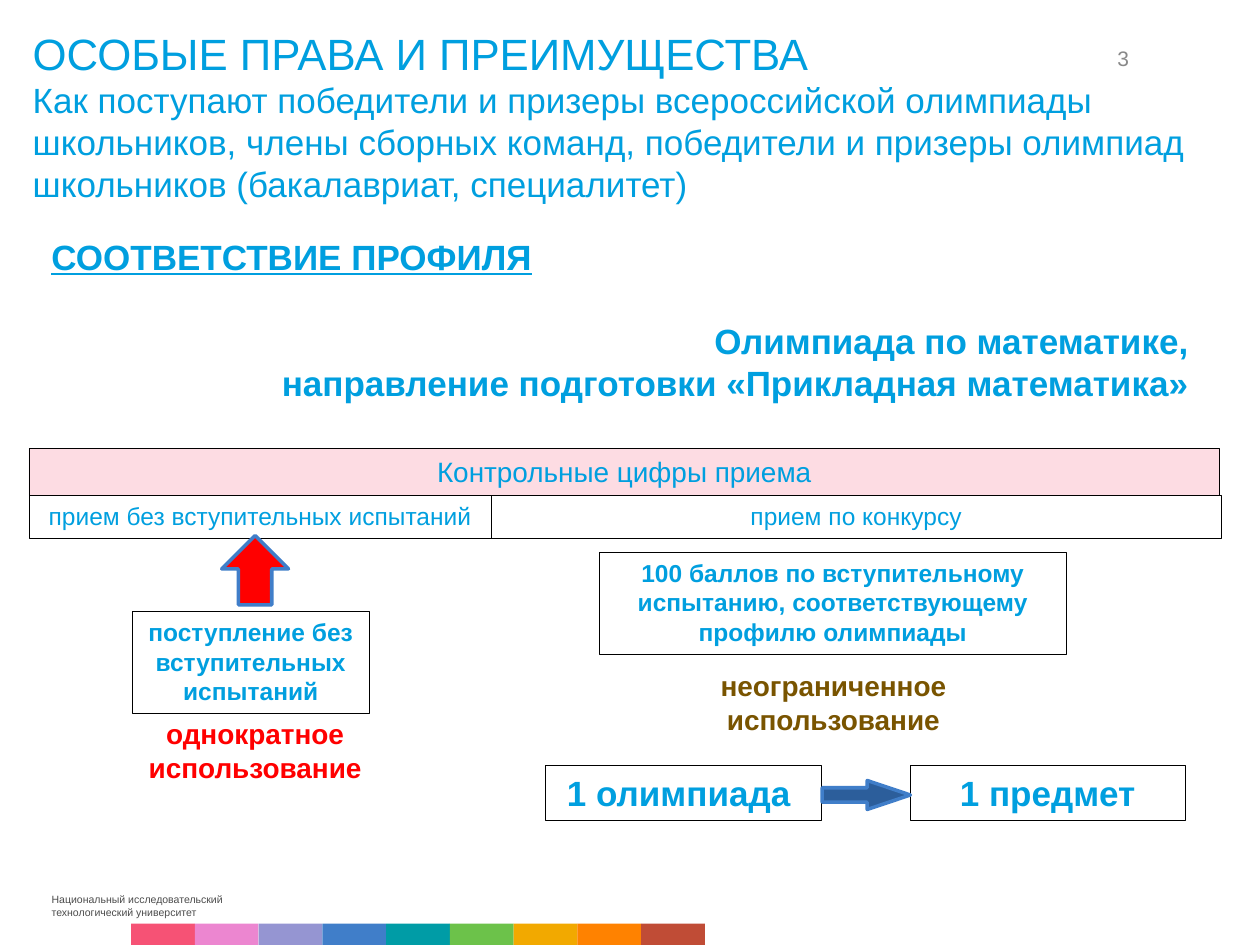
"""Build the slide on olympiad admission rights on a grid of 100 columns by 75 rows."""
from pptx import Presentation, util as u
from pptx.dml.color import RGBColor
from pptx.enum import shapes, text

BLUE, RED, BROWN, GREY = "009FDF", "FF0000", "795400", "898989"
LEFT, CENTER, RIGHT = text.PP_ALIGN.LEFT, text.PP_ALIGN.CENTER, text.PP_ALIGN.RIGHT
RECT, UP = shapes.MSO_SHAPE.RECTANGLE, shapes.MSO_SHAPE.UP_ARROW

prs = Presentation()
prs.slide_width, prs.slide_height = u.Inches(10), u.Inches(7.5)
COL, ROW = prs.slide_width / 100, prs.slide_height / 75
s = prs.slides.add_slide(prs.slide_layouts[5])


def place(box):
    """Turn columns and rows into slide lengths."""
    return [round(n * unit) for n, unit in zip(box, (COL, ROW, COL, ROW))]


def write(tf, lines, align, color, **fmt):
    """Fill a text frame with equally formatted paragraphs."""
    tf.word_wrap, tf.auto_size = True, text.MSO_AUTO_SIZE.NONE
    tf.vertical_anchor = text.MSO_ANCHOR.TOP
    for i, line in enumerate(lines):
        p = tf.paragraphs[0] if i == 0 else tf.add_paragraph()
        p.alignment = align
        r = p.add_run()
        r.text = line
        r.font.name = "Arial"
        r.font.color.rgb = RGBColor.from_string(color)
        for key, value in fmt.items():
            setattr(r.font, key, u.Pt(value) if key == "size" else value)


title = s.shapes.title
title.left, title.top, title.width, title.height = place((1.6, 1.6, 96.1, 4.7))
write(title.text_frame, [
    "ОСОБЫЕ ПРАВА И ПРЕИМУЩЕСТВА",
    "Как поступают победители и призеры всероссийской олимпиады школьников, "
    "члены сборных команд, победители и призеры олимпиад школьников "
    "(бакалавриат, специалитет)"], LEFT, BLUE, size=20)
title.text_frame.paragraphs[0].runs[0].font.size = u.Pt(25)

strip = ["F65275", "EC86D0", "9595D2", "407EC9", "009CA6",
         "6CC24A", "F2A900", "FF8200", "C04C36"]
bars = [(RECT, (10.4 + 5.06 * i, 73.3, 5.06, 1.8), c, None, 0) for i, c in enumerate(strip)]
frames = [
    ((2.3, 35.6, 94.5, 3.7), "FDDCE3", "Контрольные цифры приема", 16, False),
    ((2.3, 39.3, 36.7, 3.4), "FFFFFF", "прием без вступительных испытаний", 14, False),
    ((39, 39.3, 57.9, 3.4), "FFFFFF", "прием по конкурсу", 14, False),
    ((10.5, 48.5, 18.8, 8.1), "FFFFFF", "поступление без вступительных испытаний", 14, True),
    ((47.6, 43.8, 37, 8.1), "FFFFFF",
     "100 баллов по вступительному испытанию, соответствующему профилю олимпиады", 14, True),
    ((43.3, 60.7, 21.9, 4.4), "FFFFFF", "1 олимпиада ", 20, True),
    ((72.2, 60.7, 21.9, 4.4), "FFFFFF", "1 предмет", 20, True)]
boxes = [(RECT, box, fill, "000000", 0.25) for box, fill, *_ in frames]
arrows = [(UP, (17.6, 42.5, 5.3, 5.5), RED, "407EC9", 2),
          (UP, (67.6, 59.6, 2.3, 7), "2C5E9B", "407EC9", 2)]

drawn = []
for kind, box, fill, line, weight in bars + boxes + arrows:
    sp = s.shapes.add_shape(kind, *place(box))
    sp.shadow.inherit = False
    sp.fill.solid()
    sp.fill.fore_color.rgb = RGBColor.from_string(fill)
    if line:
        sp.line.color.rgb = RGBColor.from_string(line)
        sp.line.width = u.Pt(weight)
    else:
        sp.line.fill.background()
    drawn.append(sp)

for sp, (_, _, label, size, bold) in zip(drawn[len(bars):], frames):
    write(sp.text_frame, [label], CENTER, BLUE, size=size, bold=bold)

drawn[-1].rotation = 90
drawn[-1].adjustments[0], drawn[-1].adjustments[1] = 0.5, 1.49

notes = [
    ((3.1, 18.2, 93, 14.5), ["СООТВЕТСТВИЕ ПРОФИЛЯ", "Олимпиада по математике, ",
                             "направление подготовки «Прикладная математика» "],
     RIGHT, BLUE, {"size": 20, "bold": True}),
    ((81.2, 3.6, 8.4, 3.6), ["3"], RIGHT, GREY, {"size": 12}),
    ((56, 52.6, 20.3, 6.4), ["неограниченное использование"], CENTER, BROWN,
     {"size": 16, "bold": True}),
    ((10.5, 56.4, 19.5, 6.4), ["однократное использование"], CENTER, RED,
     {"size": 16, "bold": True}),
    ((3.5, 70.5, 15.5, 2.8), ["Национальный исследовательский", "технологический университет"],
     LEFT, "4C4C4C", {"size": 6})]
frames_of_text = []
for box, lines, align, color, fmt in notes:
    tf = s.shapes.add_textbox(*place(box)).text_frame
    write(tf, lines, align, color, **fmt)
    frames_of_text.append(tf)

profile, number, *_, footer = frames_of_text
heading, olympiad, _ = profile.paragraphs
heading.alignment = LEFT
heading.runs[0].font.underline = True
olympiad.space_before = u.Pt(24)

footer.word_wrap = False
for tf, margins in ((number, (0, 0, 0, 0)), (footer, (0.06, 0.04, 0.08, 0.04))):
    for side, inches in zip(("left", "top", "right", "bottom"), margins):
        setattr(tf, f"margin_{side}", u.Inches(inches))

prs.save("out.pptx")
